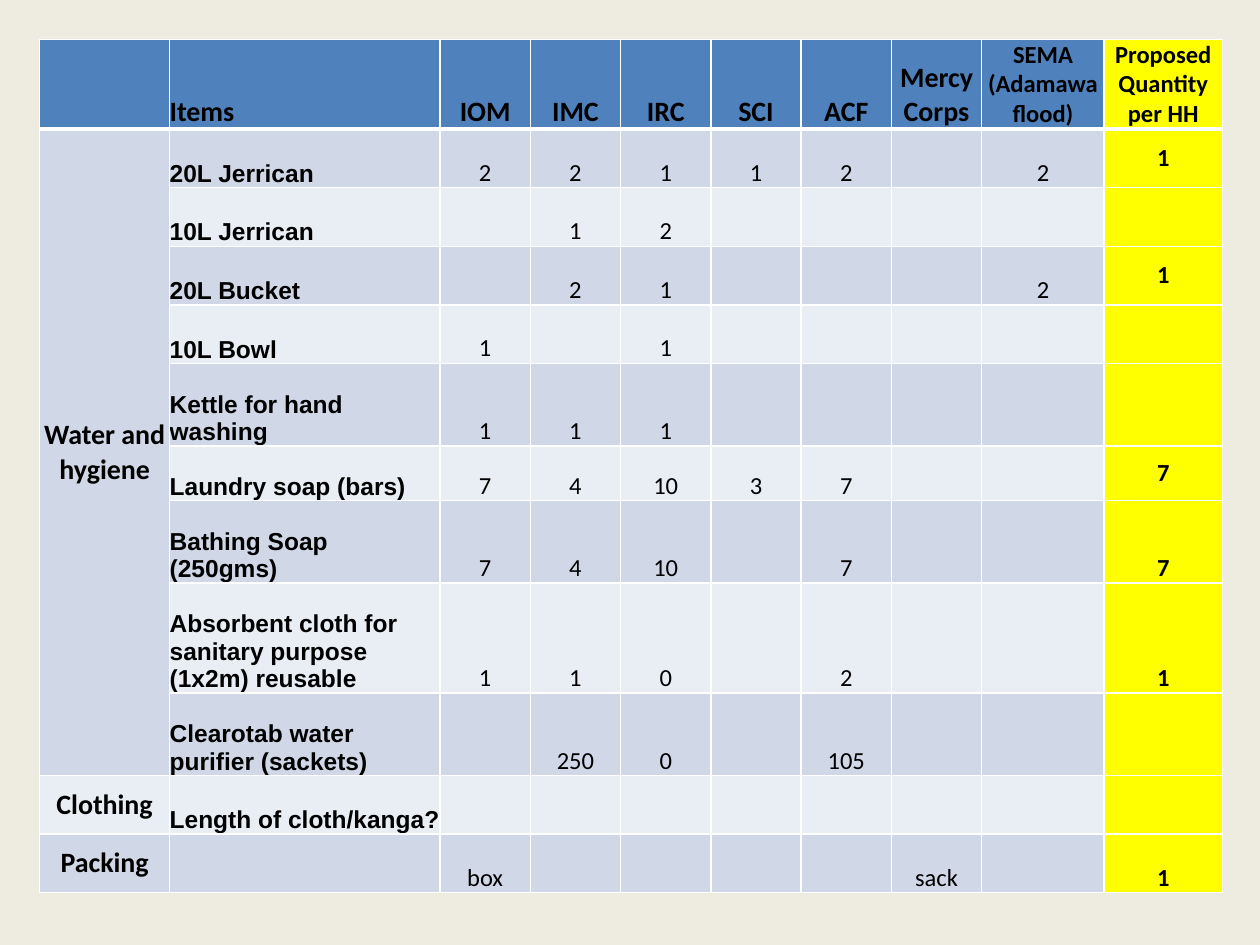
from dataclasses import dataclass, field
from lxml import etree
from pptx import Presentation
from pptx.dml.color import RGBColor
from pptx.enum.text import MSO_ANCHOR, PP_ALIGN
from pptx.oxml.ns import qn
from pptx.util import Cm, Pt

LEFT, CENTER = PP_ALIGN.LEFT, PP_ALIGN.CENTER
BOTTOM, MIDDLE = MSO_ANCHOR.BOTTOM, MSO_ANCHOR.MIDDLE

HUES = {
    "page": "EEECE1", "head": "4F81BD", "dark": "D0D8E8", "light": "E9EDF4",
    "mark": "FFFF00", "line": "FFFFFF", "ink": "000000",
}
COLS = [2.62, 5.45] + [1.82] * 6 + [2.47, 2.38]
ROWS = [1.78] + [1.18] * 4 + [1.67, 1.1, 1.66, 2.22, 1.66, 1.18, 1.18]
LAST = len(COLS) - 1
GROUP = 9
RAISED = (0, 1, 3, 6)
DATA = [
    ["", "Items", "IOM", "IMC", "IRC", "SCI", "ACF", "Mercy Corps",
     "SEMA (Adamawa flood)", "Proposed Quantity per HH"],
    ["Water and hygiene", "20L Jerrican", "2", "2", "1", "1", "2", "", "2", "1"],
    ["", "10L Jerrican", "", "1", "2", "", "", "", "", ""],
    ["", "20L Bucket", "", "2", "1", "", "", "", "2", "1"],
    ["", "10L Bowl", "1", "", "1", "", "", "", "", ""],
    ["", "Kettle for hand washing", "1", "1", "1", "", "", "", "", ""],
    ["", "Laundry soap (bars)", "7", "4", "10", "3", "7", "", "", "7"],
    ["", "Bathing Soap (250gms)", "7", "4", "10", "", "7", "", "", "7"],
    ["", "Absorbent cloth for sanitary purpose (1x2m) reusable",
     "1", "1", "0", "", "2", "", "", "1"],
    ["", "Clearotab water purifier (sackets)",
     "", "250", "0", "", "105", "", "", ""],
    ["Clothing", "Length of cloth/kanga?", "", "", "", "", "", "", "", ""],
    ["Packing", "", "box", "", "", "", "", "sack", "", "1"],
]


@dataclass
class Deck:
    """Holds the style and the current slide, and draws each kind of element."""
    slide: object
    hues: dict = field(default_factory=lambda: HUES)

    def color(self, name):
        return RGBColor.from_string(self.hues[name])

    def page(self, name):
        fill = self.slide.background.fill
        fill.solid()
        fill.fore_color.rgb = self.color(name)

    def edges(self, cell, top, bottom):
        props = cell._tc.get_or_add_tcPr()
        for side, width in (("L", 1), ("R", 1), ("T", top), ("B", bottom)):
            line = etree.SubElement(props, qn(f"a:ln{side}"), w=str(Pt(width)))
            fill = etree.SubElement(line, qn("a:solidFill"))
            etree.SubElement(fill, qn("a:srgbClr"), val=self.hues["line"])

    def paint(self, cell, hue):
        cell.fill.solid()
        cell.fill.fore_color.rgb = self.color(hue)
        cell.margin_left = cell.margin_right = 0
        cell.margin_top = cell.margin_bottom = 0

    def label(self, cell, text, size, face, bold, align, anchor):
        cell.vertical_anchor = anchor
        para = cell.text_frame.paragraphs[0]
        para.alignment = align
        run = para.add_run()
        run.text = text
        font = run.font
        font.size, font.name, font.bold = Pt(size), face, bold
        font.color.rgb = self.color("ink")

    def table(self, left, top, data, cols, rows):
        frame = self.slide.shapes.add_table(
            len(rows), len(cols), Cm(left), Cm(top), Cm(sum(cols)), Cm(sum(rows)))
        grid = frame.table
        for col, width in zip(grid.columns, cols):
            col.width = Cm(width)
        for row, height in zip(grid.rows, rows):
            row.height = Cm(height)
        for r, line in enumerate(data):
            for c, text in enumerate(line):
                cell = grid.cell(r, c)
                self.edges(cell, 3 if r == 1 else 1, 3 if r == 0 else 1)
                self.paint(cell, pick_hue(r, c))
                if text:
                    self.label(cell, text, *pick_type(r, c))
        return grid


def pick_hue(r, c):
    """Return the fill name for a cell."""
    if c == LAST:
        return "mark"
    if r == 0:
        return "head"
    if c == 0 and r <= GROUP:
        return "dark"
    return "dark" if r % 2 else "light"


def pick_type(r, c):
    """Return size, face, weight, alignment and anchor for a cell."""
    size = 16 if c == 0 or (r == 0 and c < LAST - 1) else 14
    face = "Arial" if c == 1 and r else "Calibri"
    bold = r == 0 or c in (0, 1, LAST)
    align = LEFT if c == 1 else CENTER
    anchor = MIDDLE if c == 0 or (c == LAST and r in RAISED) else BOTTOM
    return size, face, bold, align, anchor


def main():
    """Build the slide and save it."""
    show = Presentation()
    show.slide_width, show.slide_height = Cm(25.4), Cm(19.05)
    deck = Deck(show.slides.add_slide(show.slide_layouts[6]))
    deck.page("page")
    grid = deck.table(0.8, 0.8, DATA, COLS, ROWS)
    grid.cell(1, 0).merge(grid.cell(GROUP, 0))
    show.save("out.pptx")


if __name__ == "__main__":
    main()
